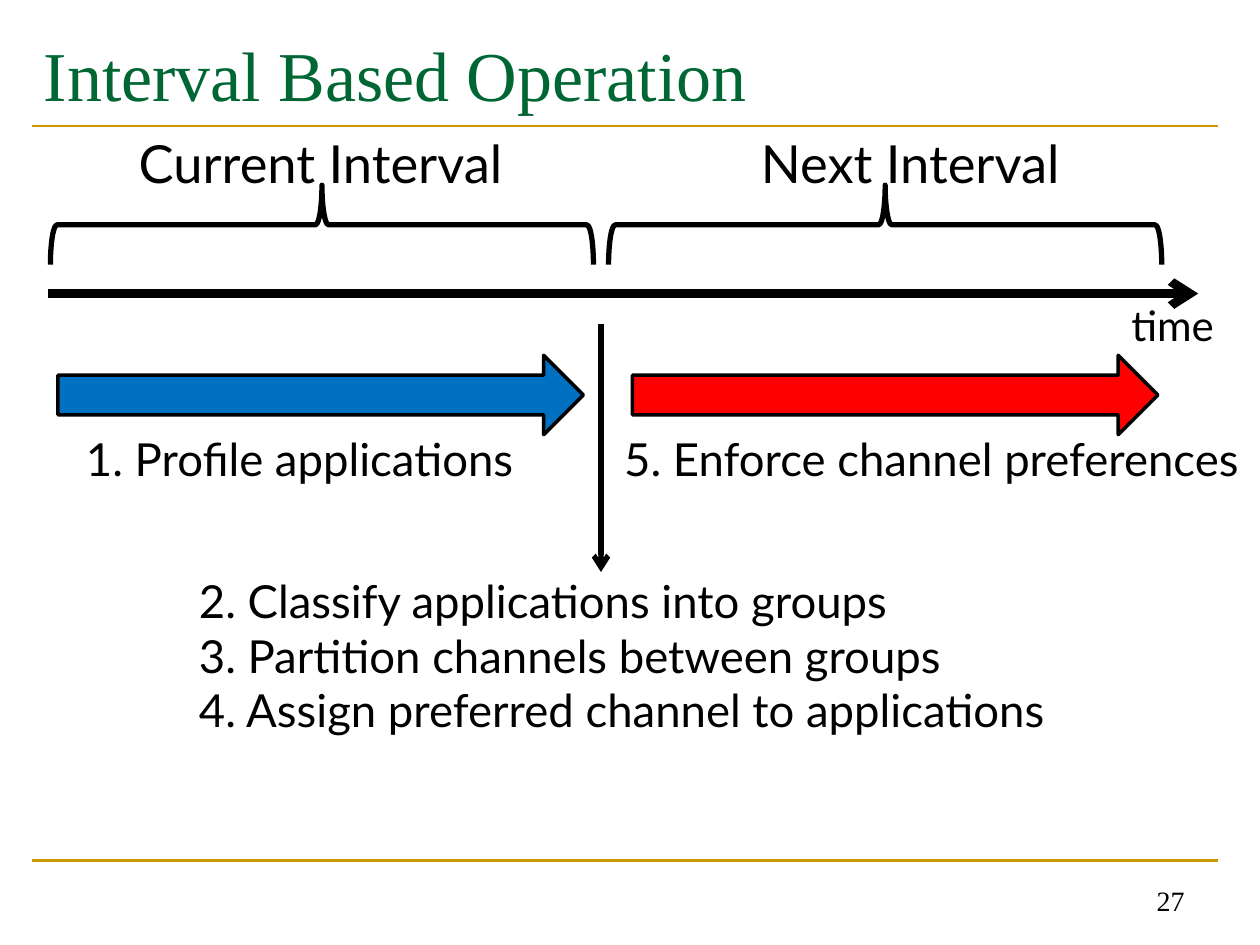
from collections import namedtuple

from lxml.etree import SubElement
from pptx import Presentation
from pptx.dml.color import RGBColor
from pptx.enum.shapes import MSO_CONNECTOR, MSO_SHAPE
from pptx.enum.text import MSO_ANCHOR, PP_ALIGN
from pptx.oxml.ns import qn
from pptx.util import Inches, Pt

COLUMNS, ROWS = 100, 75  # square grid cells of a tenth of an inch
CELL = Inches(0.1)
SERIF, SANS = "Times New Roman", "Lato"
BLACK, GREEN, GOLD, BLUE, RED = "000000", "006633", "CC9900", "0070C0", "FF0000"

Box = namedtuple("Box", "left top width height")


def cells(*counts):
    return [round(count * CELL) for count in counts]


def color(hex_string):
    return RGBColor.from_string(hex_string)


def add_text(page, box, lines, size, font=SANS, ink=BLACK,
             align=PP_ALIGN.LEFT, anchor=MSO_ANCHOR.TOP):
    frame = page.shapes.add_textbox(*cells(*box)).text_frame
    frame.word_wrap = True
    frame.vertical_anchor = anchor
    for index, line in enumerate(lines):
        para = frame.add_paragraph() if index else frame.paragraphs[0]
        para.alignment = align
        span = para.add_run()
        span.text = line
        span.font.name = font
        span.font.size = Pt(size)
        span.font.color.rgb = color(ink)


def add_line(page, start, end, ink, weight, arrow=False):
    line = page.shapes.add_connector(
        MSO_CONNECTOR.STRAIGHT, *cells(*start, *end))
    line.line.color.rgb = color(ink)
    line.line.width = Pt(weight)
    if arrow:
        SubElement(line.line._get_or_add_ln(), qn("a:tailEnd"), type="arrow")
    SubElement(line._element.spPr, qn("a:effectLst"))


def add_outlined(page, preset, box, weight, fill=None):
    shape = page.shapes.add_shape(preset, *cells(*box))
    shape.shadow.inherit = False
    if fill:
        shape.fill.solid()
        shape.fill.fore_color.rgb = color(fill)
    else:
        shape.fill.background()
    shape.line.color.rgb = color(BLACK)
    shape.line.width = Pt(weight)
    return shape


def add_frame(page, box, title, number):
    """Title and page number with the rules that bound the content box."""
    right, bottom = box.left + box.width, box.top + box.height
    for y in (bottom, box.top):
        add_line(page, (box.left, y), (right, y), GOLD, 1.5)
    add_text(page, Box(box.left, box.top - 8.3, box.width, 8.3), [title], 40,
             SERIF, GREEN, anchor=MSO_ANCHOR.MIDDLE)
    add_text(page, Box(right - 25, bottom, 23.3, 5), [number], 16, SERIF,
             align=PP_ALIGN.RIGHT, anchor=MSO_ANCHOR.BOTTOM)


def add_timeline(page, box, label):
    right = box.left + box.width
    add_line(page, (box.left, box.top), (right, box.top), BLACK, 5, arrow=True)
    add_text(page, Box(right - 6.3, box.top, 10.2, box.height), [label], 24)


def add_interval(page, box, label, shift):
    """Label over an upward brace; shift moves the label off its centre."""
    depth, label_width = 6.3, 41.7
    middle = box.left + box.width / 2
    brace_middle = box.top + box.height - depth / 2
    # The brace is placed upright, then turned about its centre.
    brace = add_outlined(
        page, MSO_SHAPE.LEFT_BRACE,
        Box(middle - depth / 2, brace_middle - box.width / 2, depth, box.width), 3)
    brace.rotation = 90
    add_text(page, Box(middle - label_width / 2 + shift, box.top, label_width, 6.1),
             [label], 30, align=PP_ALIGN.CENTER)


def add_phase(page, box, caption, fill, caption_width, align):
    add_outlined(page, MSO_SHAPE.RIGHT_ARROW, box, 2, fill)
    add_text(page, Box(box.left - 1.65, box.top + 5.5, caption_width, 5.4),
             [caption], 26, align=align)


def add_decisions(page, box, steps, arrow_x, arrow_top):
    """Steps taken at the interval boundary, with the arrow leading to them."""
    add_line(page, (arrow_x, arrow_top), (arrow_x, box.top + 0.4), BLACK, 3, arrow=True)
    add_text(page, box, steps, 26)


def main():
    deck = Presentation()
    deck.slide_width, deck.slide_height = cells(COLUMNS, ROWS)
    page = deck.slides.add_slide(deck.slide_layouts[6])

    add_frame(page, Box(2.5, 10, 94.2, 58.3), "Interval Based Operation", "27")
    add_timeline(page, Box(3.8, 23.3, 91.3, 5), "time")
    add_interval(page, Box(4, 9.9, 43.1, 11.1), "Current Interval", -0.1)
    add_interval(page, Box(48.3, 9.9, 43.9, 11.1), "Next Interval", 2)
    add_phase(page, Box(4.6, 28.2, 41.7, 6.3), "1. Profile applications",
              BLUE, 41.7, PP_ALIGN.CENTER)
    add_phase(page, Box(50.2, 28.2, 41.7, 6.3), "5. Enforce channel preferences",
              RED, 57.5, PP_ALIGN.LEFT)
    add_decisions(page, Box(14.8, 45, 72.8, 14.1), [
        "2. Classify applications into groups",
        "3. Partition channels between groups",
        "4. Assign preferred channel to applications",
    ], arrow_x=47.7, arrow_top=25.7)

    deck.save("out.pptx")


if __name__ == "__main__":
    main()
